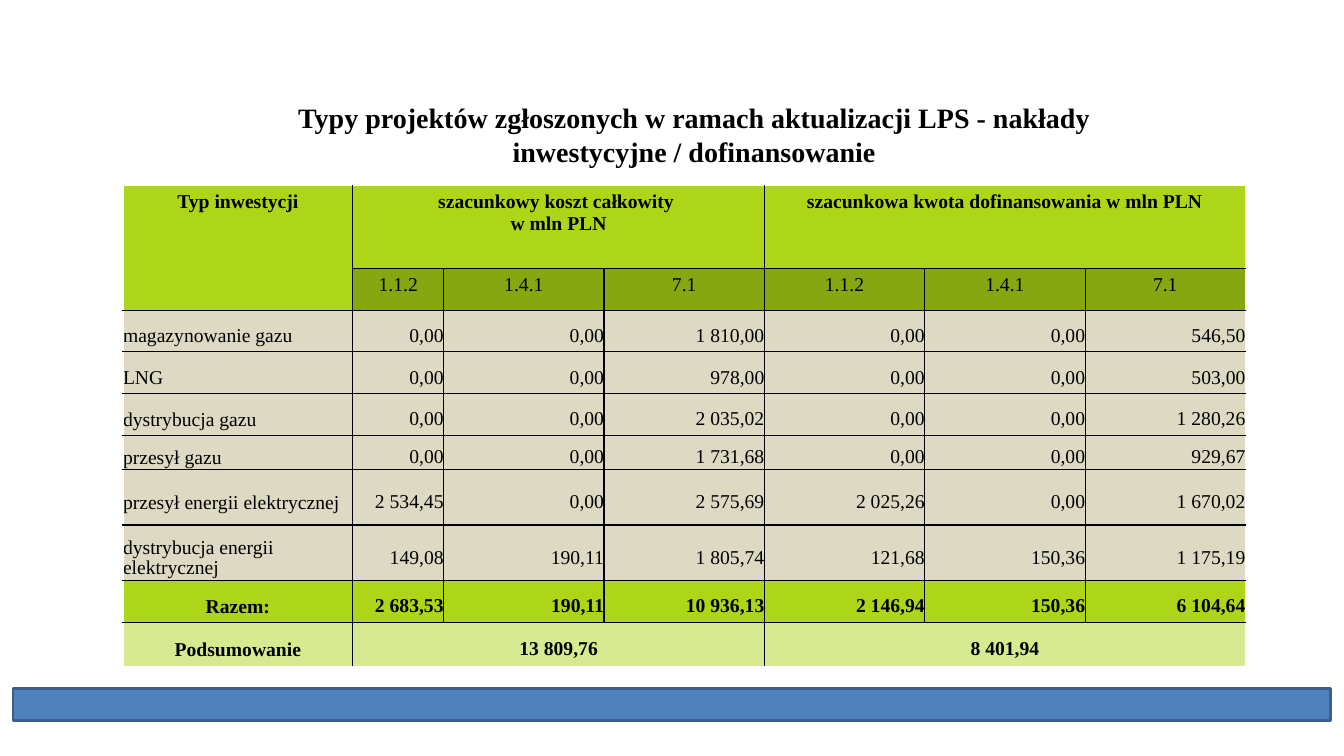
from lxml import etree
from pptx import Presentation
from pptx.dml.color import RGBColor
from pptx.enum.shapes import MSO_SHAPE
from pptx.enum.text import MSO_ANCHOR, MSO_AUTO_SIZE, PP_ALIGN
from pptx.oxml.ns import qn
from pptx.util import Cm, Pt

LEFT, MID, RIGHT = PP_ALIGN.LEFT, PP_ALIGN.CENTER, PP_ALIGN.RIGHT
TOP, CENTER, BOTTOM = MSO_ANCHOR.TOP, MSO_ANCHOR.MIDDLE, MSO_ANCHOR.BOTTOM
NO_FIT = MSO_AUTO_SIZE.NONE
PROCESS = MSO_SHAPE.FLOWCHART_PROCESS

FONT = "Times New Roman"
COLORS = {
    "text": "000000", "edge": "FFFFFF", "grid": "000000",
    "head": "ADD618", "code": "86A612", "body": "DDD9C3", "sum": "D7EA92",
    "bar": "4F81BD", "rim": "3A5F8C",
}
TITLE = ("Typy projektów zgłoszonych w ramach aktualizacji LPS - nakłady "
         "inwestycyjne / dofinansowanie")
WIDTHS = [5.79, 2.29] + [4.04] * 5
HEIGHTS = [2.08, 1.05, 1.05, 1.05, 1.05, 0.86, 1.4, 1.4, 1.05, 1.11]
CODES = ["1.1.2", "1.4.1", "7.1"]
ROWS = [
    ["Typ inwestycji", "szacunkowy koszt całkowity \nw mln PLN", "", "",
     "szacunkowa kwota dofinansowania w mln PLN", "", ""],
    [""] + CODES * 2,
    ["magazynowanie gazu", "0,00", "0,00", "1 810,00", "0,00", "0,00", "546,50"],
    ["LNG", "0,00", "0,00", "978,00", "0,00", "0,00", "503,00"],
    ["dystrybucja gazu", "0,00", "0,00", "2 035,02", "0,00", "0,00", "1 280,26"],
    ["przesył gazu", "0,00", "0,00", "1 731,68", "0,00", "0,00", "929,67"],
    ["przesył energii elektrycznej", "2 534,45", "0,00", "2 575,69",
     "2 025,26", "0,00", "1 670,02"],
    ["dystrybucja energii elektrycznej", "149,08", "190,11", "1 805,74",
     "121,68", "150,36", "1 175,19"],
    ["Razem:", "2 683,53", "190,11", "10 936,13", "2 146,94", "150,36", "6 104,64"],
    ["Podsumowanie", "13 809,76", "", "", "8 401,94", "", ""],
]
TOTAL, LAST = len(ROWS) - 2, len(ROWS) - 1


def tint(name):
    """Return the named colour."""
    return RGBColor.from_string(COLORS[name])


def write(frame, text, size=14, bold=False, align=LEFT, space=1.0):
    """Put formatted text in a frame."""
    frame.word_wrap = True
    para = frame.paragraphs[0]
    para.text = text
    para.alignment = align
    para.line_spacing = space
    for run in para.runs:
        run.font.name = FONT
        run.font.size = Pt(size)
        run.font.bold = bold
        run.font.color.rgb = tint("text")


def frame_cell(cell, sides):
    """Draw the four borders of a cell."""
    props = cell._tc.get_or_add_tcPr()
    for spot, (side, name) in enumerate(sides.items()):
        line = etree.Element(qn("a:ln" + side), w=str(Pt(1)))
        fill = etree.SubElement(line, qn("a:solidFill"))
        etree.SubElement(fill, qn("a:srgbClr"), val=COLORS[name])
        props.insert(spot, line)


def fill_cell(cell, row, col):
    """Fill, border and write one table cell."""
    head = row < 2
    fills = {0: "head", 1: "code", TOTAL: "head", LAST: "sum"}
    cell.fill.solid()
    cell.fill.fore_color.rgb = tint(fills.get(row, "body"))
    end, foot = col + cell.span_width, row + cell.span_height
    frame_cell(cell, {
        "L": "grid" if col else "edge",
        "R": "grid" if end < len(WIDTHS) else "edge",
        "T": "grid" if row else "edge",
        "B": "grid" if foot < len(ROWS) else "edge",
    })
    side = Cm(0.25 if head else 0)
    cell.margin_left = cell.margin_right = side
    cell.margin_top = Cm(0.13 if head else 0.28 if col else 0.3)
    cell.margin_bottom = Cm(0.13 if head else 0)
    cell.vertical_anchor = TOP if head else CENTER
    if head or row == LAST or (row == TOTAL and col == 0):
        align = MID
    else:
        align = RIGHT if col else LEFT
    write(cell.text_frame, ROWS[row][col], bold=row in (0, TOTAL, LAST),
          align=align, space=1.0 if head else 0.9)


def add_costs(slide, x, y, w, h):
    """Build the cost table in the given box."""
    table = slide.shapes.add_table(len(ROWS), len(WIDTHS), x, y, w, h).table
    table.first_row = table.horz_banding = False
    for col, width in zip(table.columns, WIDTHS):
        col.width = int(w * width / sum(WIDTHS))
    for row, height in zip(table.rows, HEIGHTS):
        row.height = int(h * height / sum(HEIGHTS))
    table.cell(0, 0).merge(table.cell(1, 0))
    for row in (0, LAST):
        for col in (1, 4):
            table.cell(row, col).merge(table.cell(row, col + 2))
    for row in range(len(ROWS)):
        for col in range(len(WIDTHS)):
            cell = table.cell(row, col)
            if not cell.is_spanned:
                fill_cell(cell, row, col)


def add_title(slide, x, y, w, h):
    """Set the title at the foot of the given box."""
    title = slide.shapes.title
    title.left, title.top, title.width, title.height = x, y, w, h
    frame = title.text_frame
    frame.auto_size = NO_FIT
    frame.vertical_anchor = BOTTOM
    write(frame, TITLE, size=20, bold=True, align=MID, space=1.02)


def add_bar(slide, x, y, w, h):
    """Draw the footer bar in the given box."""
    bar = slide.shapes.add_shape(PROCESS, x, y, w, h)
    bar.shadow.inherit = False
    bar.fill.solid()
    bar.fill.fore_color.rgb = tint("bar")
    bar.line.color.rgb = tint("rim")
    bar.line.width = Pt(2)


def main():
    """Build and save the slide."""
    deck = Presentation()
    deck.slide_width, deck.slide_height = Cm(33.87), Cm(19.05)
    slide = deck.slides.add_slide(deck.slide_layouts[5])
    add_bar(slide, Cm(0.33), Cm(17.35), Cm(33.2), Cm(0.8))
    add_costs(slide, Cm(3.1), Cm(4.68), Cm(28.29), Cm(12.12))
    add_title(slide, Cm(5.28), Cm(0), Cm(24.43), Cm(4.37))
    deck.save("out.pptx")


if __name__ == "__main__":
    main()
